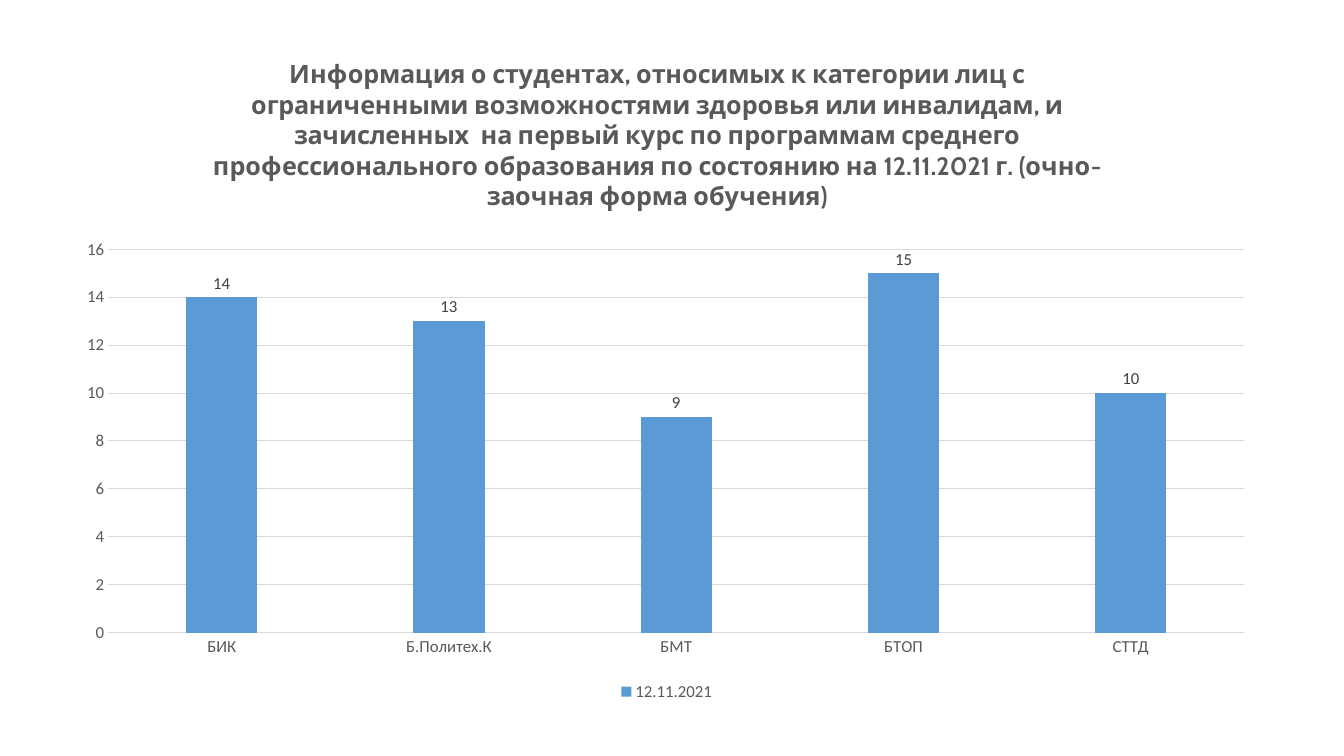
from lxml import etree
from pptx import Presentation
from pptx import util as u
from pptx.chart.data import CategoryChartData
from pptx.dml.color import RGBColor
from pptx.enum import chart as kinds
from pptx.oxml.ns import qn

COLORS = {
    "bar": "5B9BD5",
    "grid": "D9D9D9",
    "text": "595959",
    "label": "404040",
}
HEADING = (
    "Информация о студентах, относимых к категории лиц с ограниченными "
    "возможностями здоровья или инвалидам, и зачисленных  на первый курс "
    "по программам среднего профессионального образования по состоянию на "
    "12.11.2021 г. (очно-заочная форма обучения)"
)
STUDENTS = {"БИК": 14, "Б.Политех.К": 13, "БМТ": 9, "БТОП": 15, "СТТД": 10}


def color(name):
    return RGBColor.from_string(COLORS[name])


def style_font(font, name, size=12, face="Calibri", bold=False):
    font.name = face
    font.size = u.Pt(size)
    font.bold = bold
    font.color.rgb = color(name)


def style_line(line):
    line.color.rgb = color("grid")
    line.width = u.Pt(0.75)


def place(element, **fractions):
    layout = element.find(qn("c:layout"))
    if layout is None:
        layout = etree.Element(qn("c:layout"))
        element.insert(0, layout)
    manual = etree.SubElement(layout, qn("c:manualLayout"))
    if "w" in fractions:
        etree.SubElement(manual, qn("c:layoutTarget")).set("val", "inner")
    for side in ("x", "y"):
        etree.SubElement(manual, qn(f"c:{side}Mode")).set("val", "edge")
    for side, value in fractions.items():
        etree.SubElement(manual, qn(f"c:{side}")).set("val", str(value))


def add_student_chart(page):
    data = CategoryChartData()
    data.categories = list(STUDENTS)
    data.add_series("12.11.2021", list(STUDENTS.values()))
    frame = page.shapes.add_chart(
        kinds.XL_CHART_TYPE.COLUMN_CLUSTERED,
        u.Cm(1.6), u.Cm(1.14), u.Cm(30.4), u.Cm(16.64), data,
    )
    chart = frame.chart
    style_font(chart.font, "text")
    return chart


def add_heading(chart):
    chart.has_title = True
    title = chart.chart_title
    title.include_in_layout = False
    para = title.text_frame.paragraphs[0]
    span = para.add_run()
    span.text = HEADING
    style_font(span.font, "text", size=18, face="Cabin", bold=True)
    place(title._element, x=0.12, y=0.01)


def style_axes(chart):
    for axis in (chart.category_axis, chart.value_axis):
        axis.major_tick_mark = kinds.XL_TICK_MARK.NONE
        axis.minor_tick_mark = kinds.XL_TICK_MARK.NONE
        style_font(axis.tick_labels.font, "text")
    style_line(chart.category_axis.format.line)
    values = chart.value_axis
    values.minimum_scale, values.maximum_scale, values.major_unit = 0, 16, 2
    values.format.line.fill.background()
    values.has_major_gridlines = True
    style_line(values.major_gridlines.format.line)


def style_bars(chart):
    plot = chart.plots[0]
    plot.gap_width = 219
    plot.overlap = -27
    plot.vary_by_categories = False
    bars = plot.series[0]
    bars.format.fill.solid()
    bars.format.fill.fore_color.rgb = color("bar")
    labels = bars.data_labels
    labels.show_value = True
    labels.position = kinds.XL_LABEL_POSITION.OUTSIDE_END
    style_font(labels.font, "label")
    area = chart._chartSpace.find(".//" + qn("c:plotArea"))
    place(area, x=0.037, y=0.309, w=0.942, h=0.581)


def add_legend(chart):
    chart.has_legend = True
    chart.legend.position = kinds.XL_LEGEND_POSITION.BOTTOM
    chart.legend.include_in_layout = False
    style_font(chart.legend.font, "text")


def main():
    deck = Presentation()
    deck.slide_width, deck.slide_height = u.Cm(33.87), u.Cm(19.05)
    page = deck.slides.add_slide(deck.slide_layouts[6])
    chart = add_student_chart(page)
    add_heading(chart)
    style_axes(chart)
    style_bars(chart)
    add_legend(chart)
    deck.save("out.pptx")


if __name__ == "__main__":
    main()
